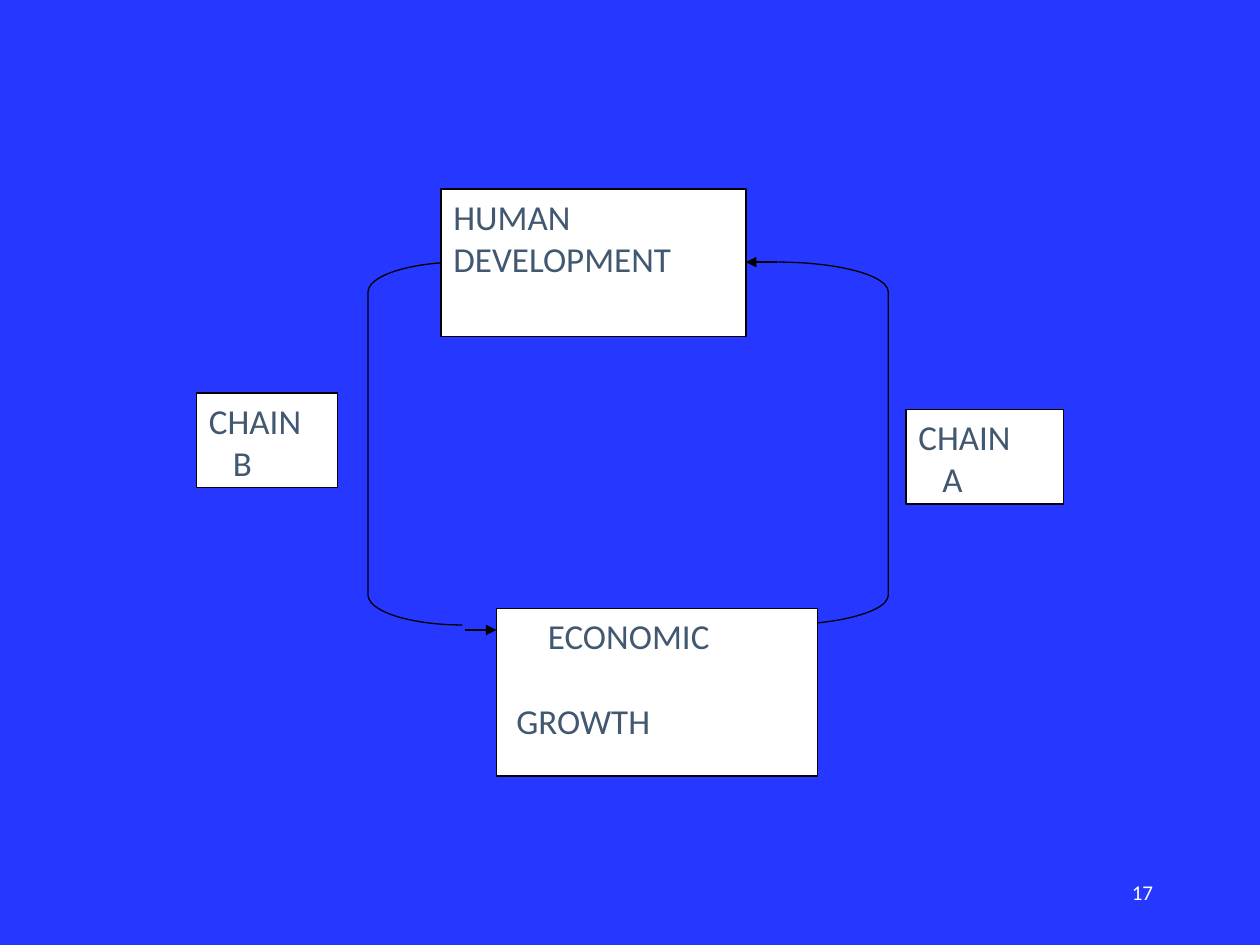
"""Build a slide showing the loop between human development and economic growth."""
from lxml import etree
from pptx import Presentation
from pptx.dml.color import RGBColor
from pptx.enum.shapes import MSO_CONNECTOR, MSO_SHAPE
from pptx.enum.text import MSO_ANCHOR, PP_ALIGN
from pptx.oxml.ns import qn
from pptx.util import Inches, Pt

RECT = MSO_SHAPE.RECTANGLE
LEFT, RIGHT = MSO_SHAPE.LEFT_BRACKET, MSO_SHAPE.RIGHT_BRACKET
STRAIGHT = MSO_CONNECTOR.STRAIGHT
TOP, MIDDLE = MSO_ANCHOR.TOP, MSO_ANCHOR.MIDDLE
START, END = PP_ALIGN.LEFT, PP_ALIGN.RIGHT
BLUE = RGBColor(0x26, 0x37, 0xFF)
SLATE = RGBColor(0x42, 0x57, 0x70)
WHITE = RGBColor(0xFF, 0xFF, 0xFF)
BLACK = RGBColor(0, 0, 0)
FONT = "Calibri"

NUMBER = ("17", (7.17, 6.83, 2.08, 0.5))
BRACKETS = [
    (LEFT, (2.92, 2.08, 0.75, 2.88), 0.32),
    (RIGHT, (6.17, 2.08, 0.88, 2.88), 0.27),
]
# Each line holds its text, indent in inches and space before in points.
BOXES = [
    ((7.19, 3.25, 1.25, 0.75), [("CHAIN", 0, 0), ("A", 0.19, 0)]),
    ((3.94, 4.83, 2.55, 1.33), [("ECONOMIC", 0.31, 0), ("GROWTH", 0.06, 24.4)]),
    ((3.5, 1.5, 2.42, 1.17), [("HUMAN DEVELOPMENT", 0, 0)]),
    ((1.56, 3.12, 1.12, 0.75), [("CHAIN", 0, 0), ("B", 0.19, 0)]),
]
ARROWS = [(3.69, 5, 3.94, 5), (6.17, 2.08, 5.92, 2.08)]


def inches(box):
    return [Inches(n) for n in box]


def ink(line):
    line.color.rgb = BLACK
    line.width = Pt(0.75)


def write(shape, lines, size, color, align=START, anchor=TOP):
    frame = shape.text_frame
    frame.word_wrap = True
    frame.vertical_anchor = anchor
    for i, (text, indent, gap) in enumerate(lines):
        para = frame.add_paragraph() if i else frame.paragraphs[0]
        para.alignment = align
        para.space_before = Pt(gap)
        para._p.get_or_add_pPr().set("marL", str(Inches(indent)))
        run = para.add_run()
        run.text = text
        run.font.name = FONT
        run.font.size = Pt(size)
        run.font.color.rgb = color


def add_shape(shapes, kind, box):
    shape = shapes.add_shape(kind, *inches(box))
    shape.shadow.inherit = False
    ink(shape.line)
    return shape


def add_arrow(shapes, ends):
    arrow = shapes.add_connector(STRAIGHT, *inches(ends))
    ink(arrow.line)
    tail = etree.SubElement(arrow.line._get_or_add_ln(), qn("a:tailEnd"))
    tail.set("type", "triangle")
    etree.SubElement(arrow._element.spPr, qn("a:effectLst"))


def main():
    deck = Presentation()
    deck.slide_width, deck.slide_height = Inches(10), Inches(7.5)
    slide = deck.slides.add_slide(deck.slide_layouts[6])
    back = slide.background.fill
    back.solid()
    back.fore_color.rgb = BLUE
    shapes = slide.shapes

    text, box = NUMBER
    write(shapes.add_textbox(*inches(box)), [(text, 0, 0)], 12, WHITE, END, MIDDLE)
    for kind, box, curve in BRACKETS:
        shape = add_shape(shapes, kind, box)
        shape.fill.background()
        shape.adjustments[0] = curve
    for box, lines in BOXES:
        shape = add_shape(shapes, RECT, box)
        shape.fill.solid()
        shape.fill.fore_color.rgb = WHITE
        write(shape, lines, 20, SLATE)
    for ends in ARROWS:
        add_arrow(shapes, ends)
    deck.save("out.pptx")


if __name__ == "__main__":
    main()
